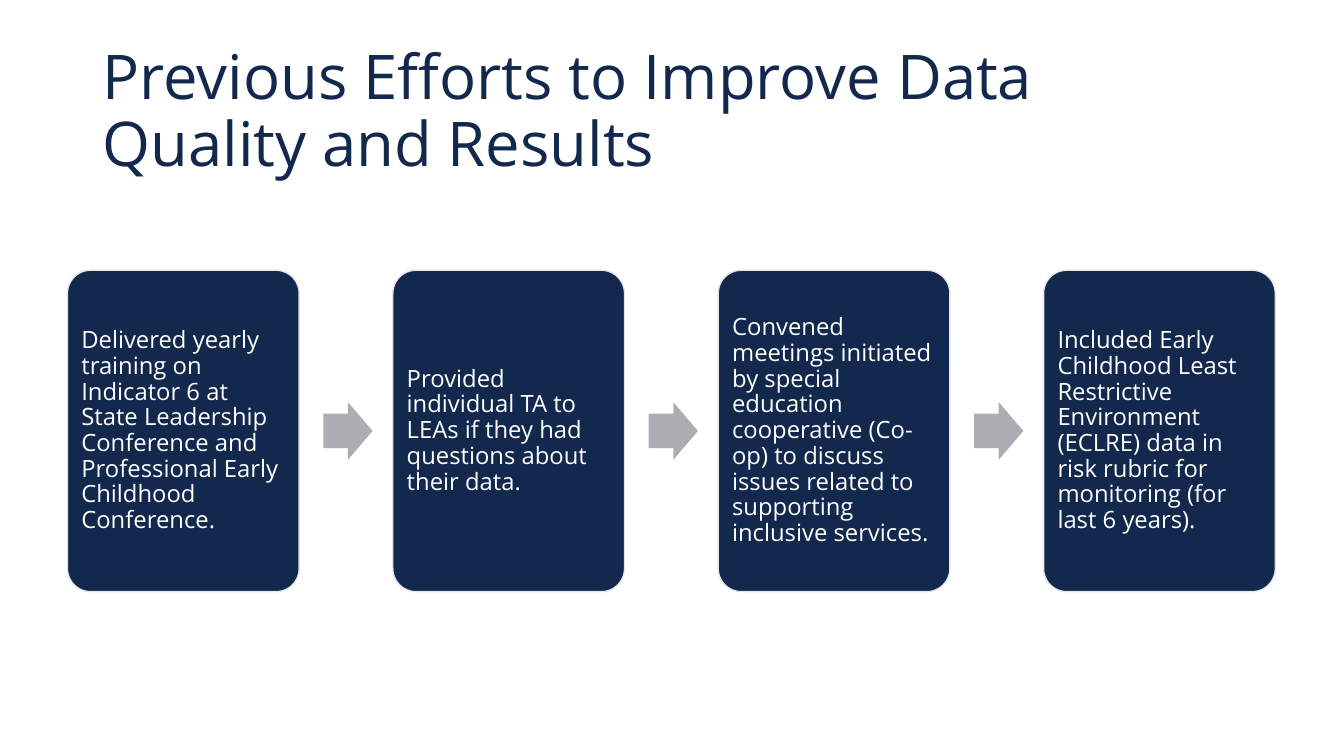
from pptx import Presentation
from pptx.dml.color import RGBColor
from pptx.enum import shapes, text
from pptx.util import Cm, Pt

NAVY, GREY, PALE, WHITE = "12284C", "ABADB2", "E7E6E6", "FFFFFF"
FONT = "Open Sans"
LEFT, TOP, WIDE, HIGH, STEP = 1.7, 6.81, 5.84, 8.1, 8.2
ARROW_W, ARROW_H = 1.24, 1.45

TITLE = "Previous Efforts to Improve Data Quality and Results"
EFFORTS = [
    "Delivered yearly training on Indicator 6 at State Leadership "
    "Conference and Professional Early Childhood Conference.",
    "Provided individual TA to LEAs if they had questions about their data.",
    "Convened meetings initiated by special education cooperative (Co-op) "
    "to discuss issues related to supporting inclusive services.",
    "Included Early Childhood Least Restrictive Environment (ECLRE) data "
    "in risk rubric for monitoring (for last 6 years).",
]


def paint(color, tone):
    """Set a colour format from a hex string."""
    color.rgb = RGBColor.from_string(tone)


def write(frame, words, size, tone):
    """Fill a text frame with one left-aligned paragraph."""
    frame.text = words
    frame.word_wrap = True
    frame.auto_size = text.MSO_AUTO_SIZE.NONE
    frame.vertical_anchor = text.MSO_ANCHOR.MIDDLE
    para = frame.paragraphs[0]
    para.alignment = text.PP_ALIGN.LEFT
    para.line_spacing = 0.9
    for run in para.runs:
        run.font.name = FONT
        run.font.size = Pt(size)
        paint(run.font.color, tone)


def add_form(slide, kind, box, tone):
    """Add a flat preset shape with a plain fill and no line."""
    form = slide.shapes.add_shape(kind, *map(Cm, box))
    form.shadow.inherit = False
    form.fill.solid()
    paint(form.fill.fore_color, tone)
    form.line.fill.background()
    return form


def add_title(slide):
    """Place and format the title placeholder."""
    title = slide.shapes.title
    title.left, title.top = Cm(2.33), Cm(1.01)
    title.width, title.height = Cm(29.21), Cm(3.68)
    write(title.text_frame, TITLE, 44, NAVY)


def add_card(slide, left, words):
    """Add a rounded card that describes one effort."""
    kind = shapes.MSO_SHAPE.ROUNDED_RECTANGLE
    card = add_form(slide, kind, (left, TOP, WIDE, HIGH), NAVY)
    card.adjustments[0] = 0.1
    card.line.width = Pt(1)
    paint(card.line.color, PALE)
    frame = card.text_frame
    frame.margin_left = frame.margin_right = Cm(0.18)
    frame.margin_top = frame.margin_bottom = Cm(0.18)
    write(frame, words, 17, WHITE)


def add_arrow(slide, left):
    """Add a block arrow centred on the height of the cards."""
    box = (left, TOP + (HIGH - ARROW_H) / 2, ARROW_W, ARROW_H)
    arrow = add_form(slide, shapes.MSO_SHAPE.RIGHT_ARROW, box, GREY)
    arrow.adjustments[0] = 0.6
    arrow.adjustments[1] = 0.5


def main():
    """Build the slide and save it."""
    deck = Presentation()
    deck.slide_width, deck.slide_height = Cm(33.87), Cm(19.05)
    slide = deck.slides.add_slide(deck.slide_layouts[5])
    add_title(slide)
    for rank, words in enumerate(EFFORTS):
        left = LEFT + rank * STEP
        if rank:
            add_arrow(slide, left - STEP + WIDE + 0.61)
        add_card(slide, left, words)
    deck.save("out.pptx")


if __name__ == "__main__":
    main()
